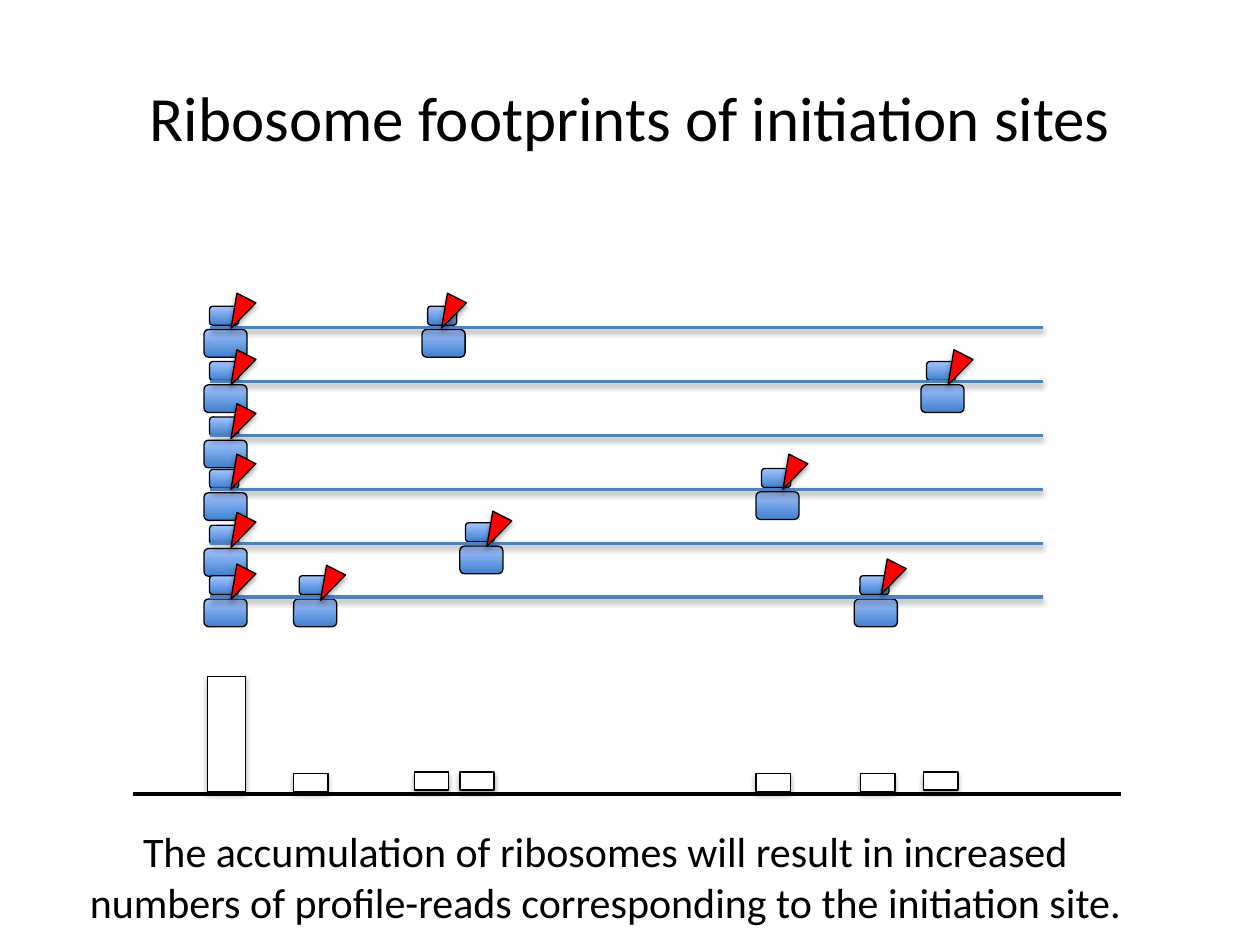
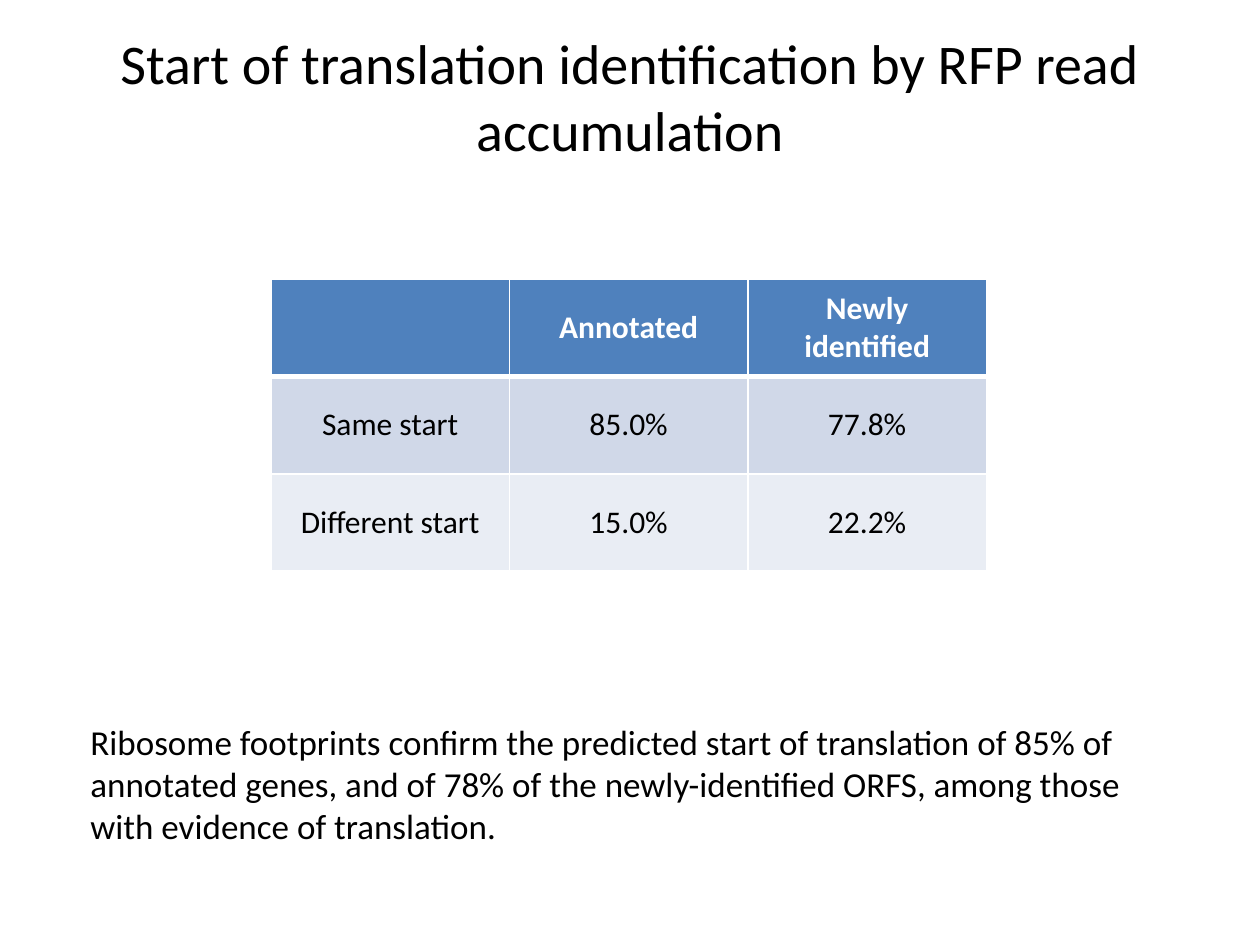
import pptx
import pptx.chart.data
import pptx.dml.color
import pptx.enum.shapes
import pptx.enum.text
import pptx.oxml
import pptx.util

Pt = pptx.util.Pt
SHAPE = pptx.enum.shapes.MSO_SHAPE
ALIGN = pptx.enum.text.PP_ALIGN
ANCHOR = pptx.enum.text.MSO_ANCHOR

# Content
FOOTPRINT_TITLE = "Ribosome footprints of initiation sites"
FOOTPRINT_CAPTION = ("The accumulation of ribosomes will result in increased numbers of "
                     "profile-reads corresponding to the initiation site.")
START_TITLE = "Start of translation identification by RFP read accumulation"
START_NOTE = ("Ribosome footprints confirm the predicted start of translation of 85% of "
              "annotated genes, and of 78% of the newly-identified ORFS, among those "
              "with evidence of translation.")
START_RATES = [
    ["", "Annotated", "Newly identified"],
    ["Same start", "85.0%", "77.8%"],
    ["Different start", "15.0%", "22.2%"],
]

# Ribosomes: transcript, left, rise above transcript, flag offset, flag rise
INITIATION = 116.6
RIBOSOMES = [
    (0, INITIATION, 12.2, 13.7, 18),
    (0, 241.2, 12.2, 9.4, 18),
    (1, INITIATION, 11.4, 13.7, 16.5),
    (1, 526.3, 11.4, 13.7, 16.5),
    (2, INITIATION, 10.6, 13.7, 16.5),
    (3, INITIATION, 11.4, 13.7, 18.5),
    (3, 432, 11.9, 13.7, 18.5),
    (4, INITIATION, 10.3, 13.7, 16),
    (4, 262.8, 11.7, 13.7, 16.7),
    (5, INITIATION, 12.3, 13.7, 17.3),
    (5, 167.8, 12.3, 13.7, 16.6),
    (5, 488.2, 12.3, 13.7, 20.2),
]
TRANSCRIPTS = 6
TRANSCRIPT_TOP, TRANSCRIPT_STEP = 187.2, 30.82
TRANSCRIPT_LEFT, TRANSCRIPT_RIGHT = 120.2, 596.2

# Read counts: left, base, width, height
READ_BARS = [(118.8, 452.2, 21.6, 65.5)] + [
    (left, base, 19.6, 10.2) for left, base in
    [(167.8, 452.2), (527.8, 451.4), (491.8, 452.2), (432, 452.2),
     (262.8, 451.4), (236.9, 451.4)]]

FONT = "Calibri"
COLORS = {
    "black": "000000", "white": "FFFFFF", "blue": "4F81BD", "flag": "FF0000",
    "ribosome_low": "3F80CE", "ribosome_high": "A4C4FF",
    "band_dark": "D0D8E8", "band_light": "E9EDF4",
}


def rgb(name):
    return pptx.dml.color.RGBColor.from_string(COLORS[name])


def box(left, top, width, height):
    return Pt(left), Pt(top), Pt(width), Pt(height)


def set_shadow(shape, opacity=0, blur=3.1, distance=1.8):
    """Replace the theme effect with a soft shadow below, or with nothing."""
    shadow = ""
    if opacity:
        shadow = (f'<a:outerShdw blurRad="{Pt(blur)}" dist="{Pt(distance)}" dir="5400000" '
                  f'rotWithShape="0"><a:srgbClr val="{COLORS["black"]}">'
                  f'<a:alpha val="{opacity * 1000}"/></a:srgbClr></a:outerShdw>')
    shape._element.spPr.append(pptx.oxml.parse_xml(
        '<a:effectLst xmlns:a="http://schemas.openxmlformats.org/drawingml/2006/main">'
        f'{shadow}</a:effectLst>'))


def style_text(paragraph, size, color="black", bold=False, align=ALIGN.CENTER):
    paragraph.alignment = align
    for run in paragraph.runs:
        run.font.name = FONT
        run.font.size = Pt(size)
        run.font.bold = bold
        run.font.color.rgb = rgb(color)


def add_text(slide, text, place, size, align=ALIGN.CENTER, anchor=ANCHOR.MIDDLE):
    frame = slide.shapes.add_textbox(*box(*place)).text_frame
    frame.word_wrap = True
    frame.vertical_anchor = anchor
    frame.text = text
    style_text(frame.paragraphs[0], size, align=align)


def add_outlined(slide, kind, place, fill=None, shadow=0):
    shape = slide.shapes.add_shape(kind, *box(*place))
    if fill:
        shape.fill.solid()
        shape.fill.fore_color.rgb = rgb(fill)
    else:
        shape.fill.gradient()
        shape.fill.gradient_angle = 90
        for stop, color in zip(shape.fill.gradient_stops, ("ribosome_low", "ribosome_high")):
            stop.color.rgb = rgb(color)
        shape.fill.gradient_stops[0].position = 0
        shape.fill.gradient_stops[1].position = 1
    shape.line.color.rgb = rgb("black")
    shape.line.width = Pt(0.75)
    set_shadow(shape, shadow)
    return shape


def add_level_line(slide, left, right, y, color, shadow=0):
    line = slide.shapes.add_connector(
        pptx.enum.shapes.MSO_CONNECTOR.STRAIGHT, Pt(left), Pt(y), Pt(right), Pt(y))
    line.line.color.rgb = rgb(color)
    line.line.width = Pt(2)
    set_shadow(line, shadow, distance=1.6)


def set_borders(cell, top, bottom):
    properties = cell._tc.get_or_add_tcPr()
    widths = {"lnL": 1, "lnR": 1, "lnT": top, "lnB": bottom}
    for index, (side, width) in enumerate(widths.items()):
        properties.insert(index, pptx.oxml.parse_xml(
            f'<a:{side} xmlns:a="http://schemas.openxmlformats.org/drawingml/2006/main" '
            f'w="{Pt(width)}"><a:solidFill><a:srgbClr val="{COLORS["white"]}"/>'
            f'</a:solidFill></a:{side}>'))


def build_footprints(slide):
    add_text(slide, FOOTPRINT_TITLE, (36, 21.6, 648, 90), 36)
    levels = [TRANSCRIPT_TOP + i * TRANSCRIPT_STEP for i in range(TRANSCRIPTS)]

    # Ribosome subunits, then transcripts, then flags
    for track, left, rise, _, _ in RIBOSOMES:
        top = levels[track] - rise
        add_outlined(slide, SHAPE.ROUNDED_RECTANGLE, (left + 3.2, top, 16.6, 10.8))
        add_outlined(slide, SHAPE.ROUNDED_RECTANGLE, (left, top + 13.3, 24.6, 15.8))
    for level in levels:
        add_level_line(slide, TRANSCRIPT_LEFT, TRANSCRIPT_RIGHT, level, "blue", shadow=38)
    for track, left, _, offset, rise in RIBOSOMES:
        flag = add_outlined(slide, SHAPE.ISOSCELES_TRIANGLE,
                            (left + offset, levels[track] - rise, 12.2, 19.4), "flag", 35)
        flag.rotation = 207

    # Read counts along the transcript
    add_level_line(slide, 76.3, 640.8, 453.6, "black")
    for left, base, width, height in READ_BARS:
        add_outlined(slide, SHAPE.RECTANGLE, (left, base - height, width, height), "white", 35)
    add_text(slide, FOOTPRINT_CAPTION, (36, 465.1, 620, 71.3), 24)


def build_start_rates(slide):
    add_text(slide, START_TITLE, (0, 27.4, 720, 54), 32)
    rates = slide.shapes.add_table(3, 3, *box(154.8, 159.4, 409, 167.1)).table
    for column in rates.columns:
        column.width = Pt(136.3)
    for row in rates.rows:
        row.height = Pt(55.7)
    fills = ["blue", "band_dark", "band_light"]
    for r, values in enumerate(START_RATES):
        for c, value in enumerate(values):
            cell = rates.cell(r, c)
            cell.text = value
            cell.vertical_anchor = ANCHOR.MIDDLE
            cell.fill.solid()
            cell.fill.fore_color.rgb = rgb(fills[r])
            header = r == 0
            style_text(cell.text_frame.paragraphs[0], 18,
                       "white" if header else "black", bold=header)
            set_borders(cell, top=3 if r == 1 else 1, bottom=3 if header else 1)
    add_text(slide, START_NOTE, (44.6, 408.2, 630.7, 80), 20, ALIGN.LEFT, ANCHOR.TOP)


def main():
    deck = pptx.Presentation()
    deck.slide_width, deck.slide_height = Pt(720), Pt(540)
    for build in (build_footprints, build_start_rates):
        build(deck.slides.add_slide(deck.slide_layouts[6]))
    deck.save("out.pptx")


if __name__ == "__main__":
    main()
